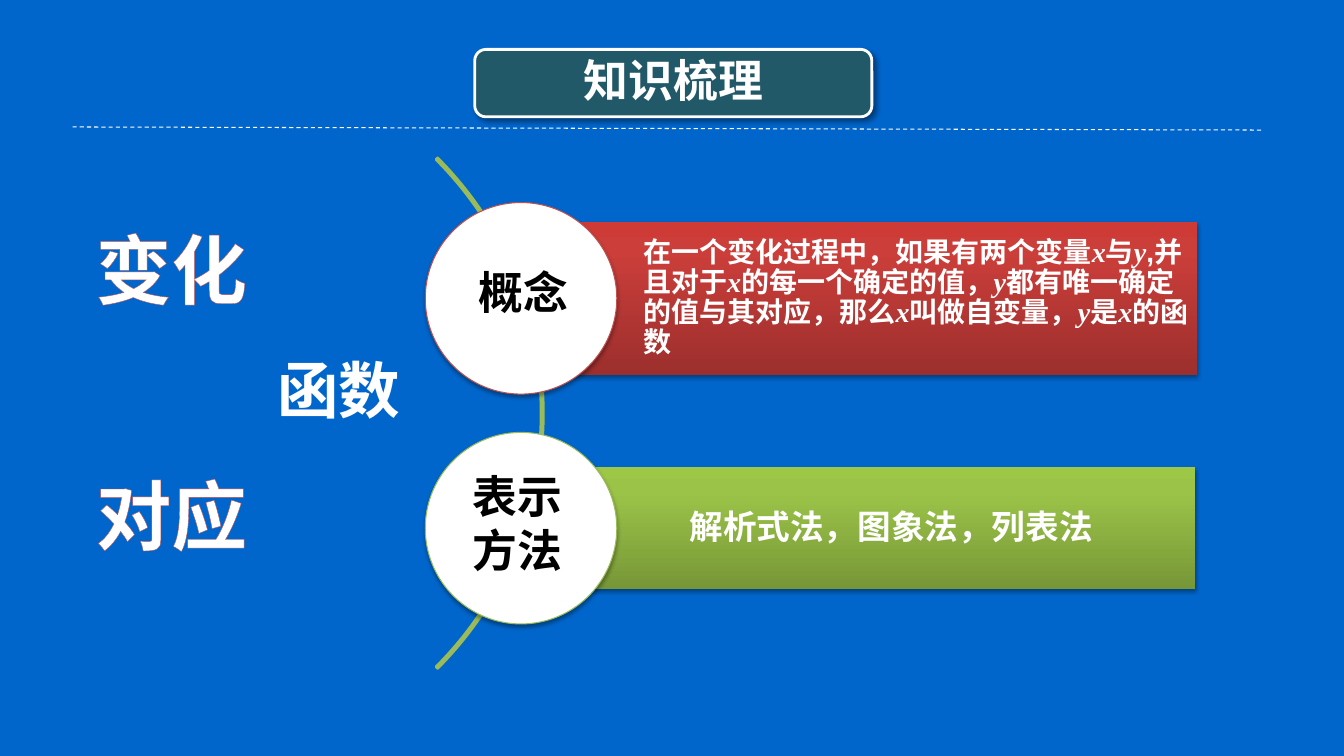
from copy import deepcopy

from lxml.etree import SubElement
from pptx import Presentation
from pptx.dml.color import RGBColor
from pptx.enum.dml import MSO_LINE
from pptx.enum.shapes import MSO_CONNECTOR, MSO_SHAPE
from pptx.enum.text import MSO_ANCHOR, MSO_AUTO_SIZE, PP_ALIGN
from pptx.oxml import parse_xml
from pptx.oxml.ns import nsdecls, qn
from pptx.util import Pt

BLUE, TEAL, WHITE, BLACK = "0066CC", "215968", "FFFFFF", "000000"
RED, GREEN = "C0504D", "9BBB59"
RED_STOPS = ((0, "9C2F2D"), (0.8, "CB3E3A"), (1, "CE3B37"))
GREEN_STOPS = ((0, "779737"), (0.8, "9BC348"), (1, "9DC746"))
# Parts between bars are set in italic: they are the variables
CONCEPT = ("在一个变化过程中，如果有两个变量|x|与|y|,并且对于|x|的每一个确定的值，|y|"
           "都有唯一确定的值与其对应，那么|x|叫做自变量，|y|是|x|的函数")


def color(code):
    return RGBColor.from_string(code)


def set_shadow(shape, alpha, blur, distance, angle):
    shape.shadow.inherit = False
    effects = shape._element.spPr.find(qn("a:effectLst"))
    shadow = SubElement(effects, qn("a:outerShdw"), blurRad=str(Pt(blur)),
                        dist=str(Pt(distance)), dir=str(angle * 60000), rotWithShape="0")
    black = SubElement(shadow, qn("a:srgbClr"), val=BLACK)
    SubElement(black, qn("a:alpha"), val=str(alpha * 1000))


def set_gradient(shape, stops):
    shape.fill.gradient()
    shape.fill.gradient_angle = 90
    first = shape.fill._xPr.find(qn("a:gradFill")).find(qn("a:gsLst"))[0]
    first.addnext(deepcopy(first))
    for stop, (position, code) in zip(shape.fill.gradient_stops, stops):
        stop.position = position
        stop.color.rgb = color(code)


def add_block(page, kind, box, fill=None, line=None, width=0.75):
    shape = page.shapes.add_shape(kind, *map(Pt, box))
    shape.shadow.inherit = False
    if fill:
        shape.fill.solid()
        shape.fill.fore_color.rgb = color(fill)
    else:
        shape.fill.background()
    if line:
        shape.line.color.rgb = color(line)
        shape.line.width = Pt(width)
    else:
        shape.line.fill.background()
    return shape


def write(shape, text, size, code, name="Calibri", align=PP_ALIGN.LEFT):
    """Fill a shape with one bold paragraph and return it."""
    frame = shape.text_frame
    frame.word_wrap = True
    para = frame.paragraphs[0]
    para.alignment = align
    para.font.size, para.font.bold = Pt(size), True
    para.font.color.rgb = color(code)
    for index, part in enumerate(text.split("|")):
        span = para.add_run()
        span.text = part
        if "|" in text:
            span.font.italic = index % 2 == 1
            span.font.name = "Times New Roman" if index % 2 else name
    if "|" not in text:
        para.font.name = name
    return para


def add_label(page, box, text, size, code, align=PP_ALIGN.LEFT):
    return write(page.shapes.add_textbox(*map(Pt, box)), text, size, code, align=align)


def set_margins(frame, left, other):
    frame.margin_left = Pt(left)
    frame.margin_top = frame.margin_right = frame.margin_bottom = Pt(other)
    frame.vertical_anchor = MSO_ANCHOR.MIDDLE


def add_heading(page, box):
    """Title on a rounded badge."""
    left, top, width, height = box
    badge = add_block(page, MSO_SHAPE.ROUNDED_RECTANGLE, box, TEAL, WHITE, 2)
    set_shadow(badge, 40, 4, 3, 45)
    title = page.shapes.title
    title.left, title.top = Pt(left + 2), Pt(top + 2)
    title.width, title.height = Pt(width - 4), Pt(height - 4)
    title.text_frame.auto_size = MSO_AUTO_SIZE.NONE
    set_margins(title.text_frame, 9.4, 9.4)
    write(title, "知识梳理", 32, WHITE, align=PP_ALIGN.CENTER).line_spacing = 0.9
    page.shapes._spTree.append(title._element)  # in front of the badge


def add_divider(page, start, end):
    line = page.shapes.add_connector(MSO_CONNECTOR.STRAIGHT, *map(Pt, start + end))
    line.line.color.rgb = color(WHITE)
    line.line.width = Pt(0.75)
    line.line.dash_style = MSO_LINE.DASH
    SubElement(line._element.spPr, qn("a:effectLst"))


def add_arc(page, box):
    arc = add_block(page, MSO_SHAPE.BLOCK_ARC, box, line=GREEN, width=2)
    for index, value in enumerate((189, 27, 0.003)):
        arc.adjustments[index] = value


def add_topic(page, center, bar_size, stops, ring, label, label_box, text, size, name, indent):
    """Gradient bar that starts at the center of a labelled circle."""
    x, y = center
    width, height = bar_size
    bar = add_block(page, MSO_SHAPE.RECTANGLE, (x, y - height / 2, width, height))
    set_gradient(bar, stops)
    set_margins(bar.text_frame, indent, 4.5)
    write(bar, text, size, WHITE, name).line_spacing = 0.9
    radius = 68.4
    circle = add_block(page, MSO_SHAPE.OVAL, (x - radius, y - radius, 2 * radius, 2 * radius),
                       WHITE, ring)
    for shape in (bar, circle):
        set_shadow(shape, 35, 3.1, 1.8, 90)
    dx, dy, label_width, label_height = label_box
    add_label(page, (x + dx, y + dy, label_width, label_height), label, 32, BLACK)


def add_keywords(page, box):
    """Two outlined words at the left, with their shared idea between them."""
    left, top, width, height = box
    word_height = 72.7
    for y, word in ((top, "变化"), (top + height - word_height, "对应")):
        para = add_label(page, (left, y, width, word_height), word, 54, WHITE, PP_ALIGN.CENTER)
        outline = parse_xml(
            f'<a:ln {nsdecls("a")} w="{Pt(0.52)}"><a:solidFill>'
            f'<a:srgbClr val="{RED}"/></a:solidFill></a:ln>')
        para.runs[0]._r.get_or_add_rPr().insert(0, outline)
    add_label(page, (left + 130.3, top + 92.2, width, 60.5), "函数", 44, WHITE)


def build_summary(deck):
    page = deck.slides.add_slide(deck.slide_layouts[5])
    page.background.fill.solid()
    page.background.fill.fore_color.rgb = color(BLUE)
    add_heading(page, (339.1, 35.3, 283.7, 48.2))
    add_divider(page, (51.8, 90.7), (902.9, 92.9))
    add_arc(page, (-127.4, 37.4, 515.5, 515.5))
    add_topic(page, (372.2, 213.1), (483.1, 109.4), RED_STOPS, RED, "概念",
              (-37.4, -27.4, 88.6, 46), CONCEPT, 20, "Arial", 87.1)
    add_topic(page, (372.2, 377.3), (481.4, 87.1), GREEN_STOPS, GREEN, "表示方法",
              (-41.8, -46.1, 97.2, 85), "解析式法，图象法，列表法", 24, "Calibri", 120.3)
    add_keywords(page, (60.5, 155.5, 123.8, 248.4))


def main():
    deck = Presentation()
    deck.slide_width, deck.slide_height = Pt(960), Pt(540)
    build_summary(deck)
    deck.save("out.pptx")


if __name__ == "__main__":
    main()
